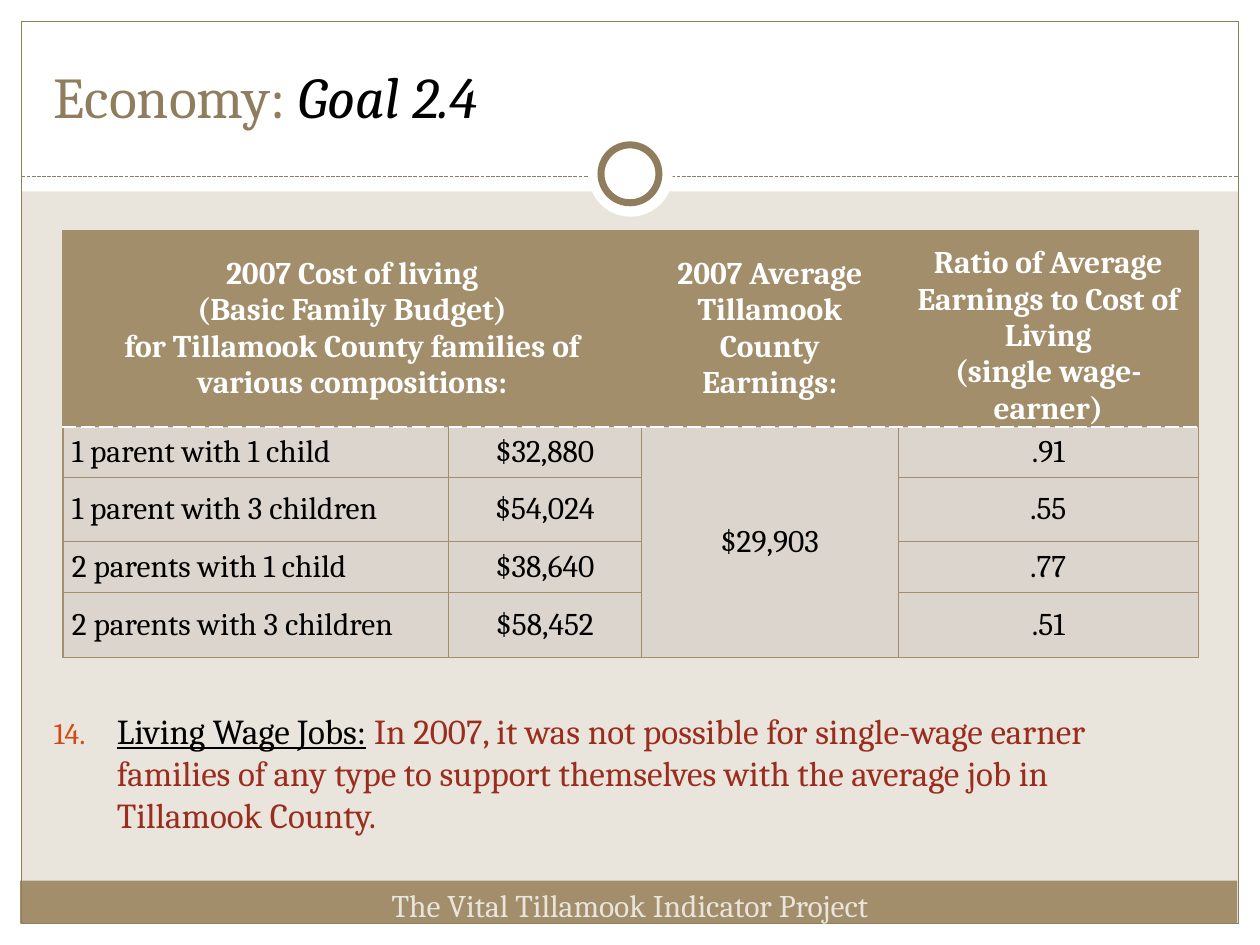
from lxml import etree
from pptx import Presentation
from pptx import util as u
from pptx.dml.color import RGBColor
from pptx.enum import dml, shapes, text
from pptx.oxml import ns

WHITE = RGBColor(0xFF, 0xFF, 0xFF)
BLACK = RGBColor(0, 0, 0)
SAND = RGBColor(0xE9, 0xE5, 0xDC)
TAN = RGBColor(0xA2, 0x8E, 0x6A)
BROWN = RGBColor(0x8F, 0x7D, 0x5E)
CELL = RGBColor(0xDC, 0xD5, 0xCD)
RED = RGBColor(0x9B, 0x2D, 0x1F)
ORANGE = RGBColor(0xD3, 0x48, 0x17)

CENTER, LEFT = text.PP_ALIGN.CENTER, text.PP_ALIGN.LEFT
MIDDLE, BOTTOM, TOP = (text.MSO_ANCHOR.MIDDLE, text.MSO_ANCHOR.BOTTOM,
                       text.MSO_ANCHOR.TOP)


def add_xml(parent, tag, **attributes):
    return etree.SubElement(parent, ns.qn(tag), attributes)


class SlideBuilder:
    font_name = "Cambria"

    def __init__(self, slide):
        self.slide = slide

    def background(self, color):
        fill = self.slide.background.fill
        fill.solid()
        fill.fore_color.rgb = color

    def shape(self, kind, box, fill=None, line=None, width=0.75):
        shape = self.slide.shapes.add_shape(kind, *map(u.Inches, box))
        shape.shadow.inherit = False
        for part, color in ((shape.fill, fill), (shape.line.fill, line)):
            if color is None:
                part.background()
            else:
                part.solid()
                part.fore_color.rgb = color
        if line is not None:
            shape.line.width = u.Pt(width)

    def dashed_line(self, start, end, color):
        rule = self.slide.shapes.add_connector(
            shapes.MSO_CONNECTOR.STRAIGHT, *map(u.Inches, start + end))
        rule.line.color.rgb = color
        rule.line.width = u.Pt(0.75)
        rule.line.dash_style = dml.MSO_LINE.SQUARE_DOT
        add_xml(rule.element.spPr, "a:effectLst")

    def paragraph(self, paragraph, runs, align=LEFT):
        """Fill a paragraph from (words, colour, font formats) runs."""
        paragraph.alignment = align
        for words, color, formats in runs:
            run = paragraph.add_run()
            run.text = words
            run.font.color.rgb = color
            for key, value in {"name": self.font_name, **formats}.items():
                setattr(run.font, key, value)

    def text_box(self, box, runs, align=LEFT, anchor=TOP):
        frame = self.slide.shapes.add_textbox(*map(u.Inches, box)).text_frame
        frame.word_wrap = True
        frame.vertical_anchor = anchor
        self.paragraph(frame.paragraphs[0], runs, align)
        return frame.paragraphs[0]

    def numbered_text(self, box, number, runs):
        item = self.text_box(box, runs)
        item.space_before = u.Pt(4)
        properties = item._p.get_or_add_pPr()
        properties.set("marL", str(u.Inches(0.5)))
        properties.set("indent", str(u.Inches(-0.5)))
        color = add_xml(properties, "a:buClr")
        add_xml(color, "a:srgbClr", val=str(ORANGE))
        add_xml(properties, "a:buSzPct", val="85000")
        add_xml(properties, "a:buFont", typeface=self.font_name)
        add_xml(properties, "a:buAutoNum", type="arabicPeriod",
                startAt=str(number))

    def border(self, cell, side, color, width, dash):
        line = add_xml(cell._tc.get_or_add_tcPr(), f"a:ln{side}",
                       w=str(u.Pt(width)))
        add_xml(add_xml(line, "a:solidFill"), "a:srgbClr", val=str(color))
        add_xml(line, "a:prstDash", val=dash)

    def cell(self, cell, row, column, words):
        header = row == 0
        divider = {0: "B", 1: "T"}.get(row)
        for side in "LRTB":
            style = ((WHITE, 0.9, "sysDash") if side == divider
                     else (TAN, 0.75, "solid"))
            self.border(cell, side, *style)
        cell.fill.solid()
        cell.fill.fore_color.rgb = TAN if header else CELL
        formats = {"margin_left": u.Inches(0.07),
                   "margin_right": u.Inches(0.07),
                   "margin_top": 0, "margin_bottom": 0,
                   "vertical_anchor":
                       BOTTOM if header and column == 3 else MIDDLE}
        for key, value in formats.items():
            setattr(cell, key, value)
        align = CENTER if header or column else LEFT
        color = WHITE if header else BLACK
        font = {"size": u.Pt(18), "bold": header}
        for index, line in enumerate(words.split("\n") if words else []):
            frame = cell.text_frame
            target = frame.add_paragraph() if index else frame.paragraphs[0]
            self.paragraph(target, [(line, color, font)], align)

    def table(self, box, widths, heights, rows, merges):
        frame = self.slide.shapes.add_table(
            len(rows), len(widths), *map(u.Inches, box))
        table = frame.table
        table.horz_banding = False
        for column, width in zip(table.columns, widths):
            column.width = u.Inches(width)
        for row, height in zip(table.rows, heights):
            row.height = u.Inches(height)
        for first, last in merges:
            table.cell(*first).merge(table.cell(*last))
        for r, row in enumerate(rows):
            for c, words in enumerate(row):
                self.cell(table.cell(r, c), r, c, words)


def main():
    deck = Presentation()
    deck.slide_width, deck.slide_height = u.Inches(10), u.Inches(7.5)
    builder = SlideBuilder(deck.slides.add_slide(deck.slide_layouts[6]))
    rectangle, oval = shapes.MSO_SHAPE.RECTANGLE, shapes.MSO_SHAPE.OVAL

    # White margins and title band, footer bar, frame
    builder.background(SAND)
    margins = [(0, 7.33, 10, 0.17), (0, 0, 10, 1.52),
               (0, 0, 0.17, 7.5), (9.83, 0, 0.17, 7.5)]
    for margin in margins:
        builder.shape(rectangle, margin, fill=WHITE)
    builder.shape(rectangle, (0.16, 6.99, 9.66, 0.34), fill=TAN)
    builder.shape(rectangle, (0.17, 0.17, 9.66, 7.16), line=BROWN)

    # Divider with ring
    builder.dashed_line((0.17, 1.4), (9.83, 1.4), BROWN)
    builder.shape(oval, (4.67, 1.05, 0.67, 0.67), fill=WHITE)
    builder.shape(oval, (4.77, 1.15, 0.46, 0.46), WHITE, BROWN, 4)

    # Finding
    size = {"size": u.Pt(20)}
    builder.numbered_text((0.33, 5.58, 9.3, 1.09), 14, [
        ("Living Wage Jobs:", BLACK, {**size, "underline": True}),
        (" ", BLACK, size),
        ("In 2007, it was not possible for single-wage earner families of "
         "any type to support themselves with the average job in "
         "Tillamook County.", RED, size)])

    # Title
    size = {"size": u.Pt(33)}
    builder.text_box((0.33, 0.25, 9.33, 0.83), [
        ("Economy: ", BROWN, size),
        ("Goal 2.4", BLACK, {**size, "italic": True})], anchor=BOTTOM)

    # Cost of living table
    rows = [
        ("2007 Cost of living\n(Basic Family Budget)\n"
         "for Tillamook County families of various compositions:", "",
         "2007 Average Tillamook County Earnings:",
         "Ratio of Average Earnings to Cost of Living\n(single wage-earner)"),
        ("1 parent with 1 child", "$32,880", "$29,903", ".91"),
        ("1 parent with 3 children", "$54,024", "", ".55"),
        ("2 parents with 1 child", "$38,640", "", ".77"),
        ("2 parents with 3 children", "$58,452", "", ".51"),
    ]
    builder.table((0.5, 1.83, 9, 3.38), (3.06, 1.53, 2.04, 2.38),
                  (1.56, 0.4, 0.51, 0.4, 0.52), rows,
                  merges=[((0, 0), (0, 1)), ((1, 2), (4, 2))])

    # Footer
    builder.text_box((2.75, 6.98, 4.5, 0.4), [
        ("The Vital Tillamook Indicator Project", SAND,
         {"size": u.Pt(18)})], CENTER)

    deck.save("out.pptx")


if __name__ == "__main__":
    main()
